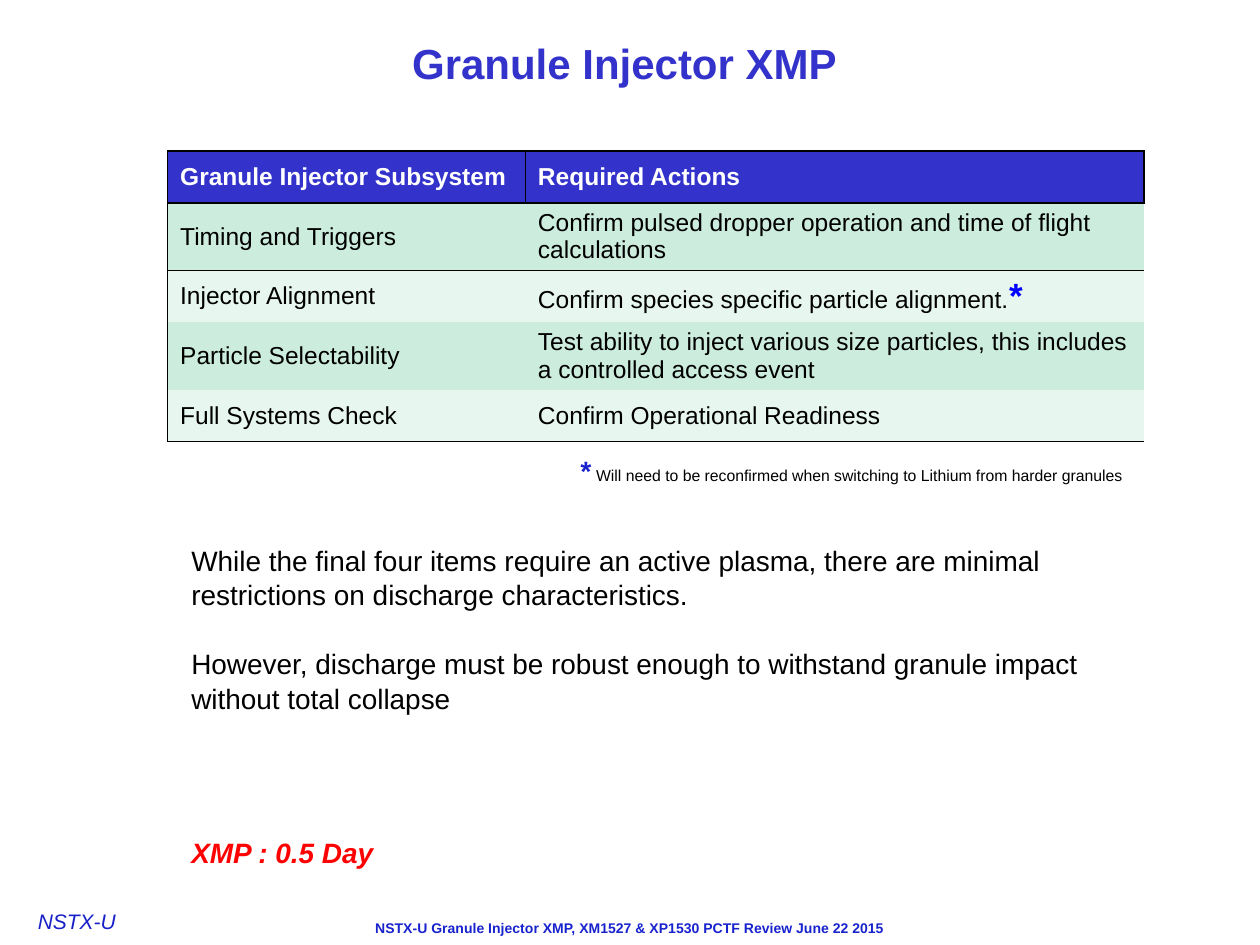
import pptx
import pptx.dml.color
import pptx.enum.text
import pptx.oxml
import pptx.oxml.ns
import pptx.util
from pptx.util import Inches

COLOURS = {
    "black": "000000", "white": "FFFFFF", "title": "3333CC", "header": "3333CC",
    "odd": "CCECDE", "even": "E7F6EF", "star": "0000FF", "footer": "1822CD",
    "project": "171FC7", "red": "FF0000",
}
ALIGN = pptx.enum.text.PP_ALIGN
ANCHOR = pptx.enum.text.MSO_ANCHOR
RESIZE = pptx.enum.text.MSO_AUTO_SIZE

ACTIONS = [
    ("Granule Injector Subsystem", "Required Actions"),
    ("Timing and Triggers",
     "Confirm pulsed dropper operation and time of flight calculations"),
    ("Injector Alignment", "Confirm species specific particle alignment."),
    ("Particle Selectability",
     "Test ability to inject various size particles, this includes a controlled access event"),
    ("Full Systems Check", "Confirm Operational Readiness"),
]
COLUMN_WIDTHS = (2.84, 4.91)
ROW_HEIGHTS = (0.41, 0.53, 0.41, 0.53, 0.41)


def rgb(name):
    return pptx.dml.color.RGBColor.from_string(COLOURS[name])


def add_run(paragraph, text, size, colour="black", **style):
    run = paragraph.add_run()
    run.text = text
    run.font.color.rgb = rgb(colour)
    formats = {"name": "Arial", "size": pptx.util.Pt(size), **style}
    for attribute, value in formats.items():
        setattr(run.font, attribute, value)


def add_text(slide, box, paragraphs, frame_formats=None, **paragraph_formats):
    """Add a text box; each paragraph is a list of (text, size, colour, style)."""
    frame = slide.shapes.add_textbox(*map(Inches, box)).text_frame
    formats = {"word_wrap": True, "auto_size": RESIZE.NONE, **(frame_formats or {})}
    for attribute, value in formats.items():
        setattr(frame, attribute, value)
    for index, runs in enumerate(paragraphs):
        paragraph = frame.add_paragraph() if index else frame.paragraphs[0]
        for attribute, value in paragraph_formats.items():
            if index or attribute != "space_before":
                setattr(paragraph, attribute, value)
        for text, size, colour, style in runs:
            add_run(paragraph, text, size, colour, **style)


def set_borders(cell, visible):
    """Draw the visible sides in black and hide the others."""
    properties = cell._tc.get_or_add_tcPr()
    namespace = pptx.oxml.ns.nsdecls("a")
    for position, side in enumerate("LRTB"):
        paint = (f'<a:solidFill><a:srgbClr val="{COLOURS["black"]}"/></a:solidFill>'
                 if side in visible else "<a:noFill/>")
        line = f'<a:ln{side} {namespace} w="12700">{paint}</a:ln{side}>'
        properties.insert(position, pptx.oxml.parse_xml(line))


def add_actions_table(slide):
    table = slide.shapes.add_table(
        len(ACTIONS), len(COLUMN_WIDTHS), Inches(1.33), Inches(1.2),
        Inches(sum(COLUMN_WIDTHS)), Inches(sum(ROW_HEIGHTS))).table
    for column, width in zip(table.columns, COLUMN_WIDTHS):
        column.width = Inches(width)
    row_sides = ["LRTB", "TB", "T", "", "B"]
    for row, (height, texts) in enumerate(zip(ROW_HEIGHTS, ACTIONS)):
        table.rows[row].height = Inches(height)
        header = row == 0
        fill = "header" if header else ("even", "odd")[row % 2]
        for column, text in enumerate(texts):
            cell = table.cell(row, column)
            cell.vertical_anchor = ANCHOR.MIDDLE
            cell.fill.solid()
            cell.fill.fore_color.rgb = rgb(fill)
            add_run(cell.text_frame.paragraphs[0], text, 14,
                    "white" if header else "black", bold=header)
            set_borders(cell, row_sides[row] + ("L" if column == 0 else ""))
    # Star that refers to the footnote
    add_run(table.cell(2, 1).text_frame.paragraphs[0], "*", 20, "star", bold=True)


def main():
    deck = pptx.Presentation()
    deck.slide_width, deck.slide_height = Inches(10), Inches(7.5)
    slide = deck.slides.add_slide(deck.slide_layouts[6])
    bold, italic = {"bold": True}, {"italic": True}
    bold_italic = {**bold, **italic}
    no_margins = dict.fromkeys(
        ("margin_left", "margin_top", "margin_right", "margin_bottom"), 0)
    no_wrap = {"word_wrap": False, "auto_size": RESIZE.SHAPE_TO_FIT_TEXT}

    # Footer
    add_text(slide, (0.3, 7.21, 1.12, 0.21),
             [[("NSTX-U", 12, "project", italic)]], no_margins)
    add_text(slide, (2, 7.25, 6, 0.24),
             [[("NSTX-U Granule Injector XMP, XM1527 & XP1530 PCTF Review June 22 2015",
                8, "footer", bold)]], alignment=ALIGN.CENTER)

    # Title
    add_text(slide, (0, 0, 10, 1), [[("Granule Injector XMP ", 24, "title", bold)]],
             {"vertical_anchor": ANCHOR.MIDDLE}, alignment=ALIGN.CENTER)

    # Required actions and footnote
    add_actions_table(slide)
    add_text(slide, (4.5, 3.55, 4.55, 0.37),
             [[("*", 16, "footer", bold_italic), (" ", 12, "footer", bold_italic),
               ("Will need to be reconfirmed when switching to Lithium from harder granules",
                9, "black", {})]], no_wrap)

    # Plasma requirements
    requirements = (
        "While the final four items require an active plasma, there are minimal "
        "restrictions on discharge characteristics.",
        "However, discharge must be robust enough to withstand granule impact "
        "without total collapse",
    )
    add_text(slide, (1.42, 4.25, 7.42, 1.72),
             [[(text, 16, "black", {})] for text in requirements],
             line_spacing=1.04, space_before=pptx.util.Pt(19))

    # Run time
    add_text(slide, (1.42, 6.58, 1.67, 0.37),
             [[("XMP : 0.5 Day", 16, "red", bold_italic)]], no_wrap)

    deck.save("out.pptx")


if __name__ == "__main__":
    main()
